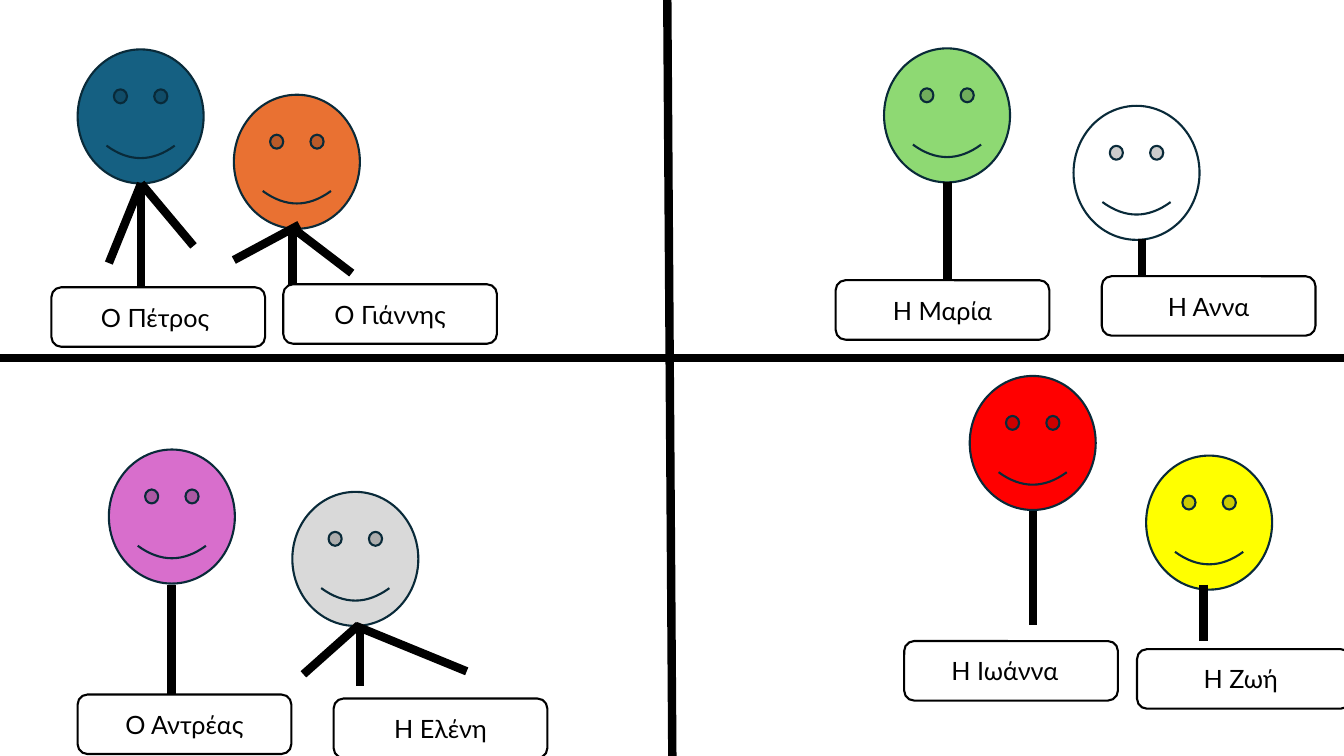
from dataclasses import dataclass

from lxml import etree
from pptx import Presentation
from pptx.dml.color import RGBColor
from pptx.enum.shapes import MSO_CONNECTOR, MSO_SHAPE
from pptx.enum.text import MSO_ANCHOR, PP_ALIGN
from pptx.oxml.ns import qn
from pptx.util import Emu, Inches, Pt

SMILEY = MSO_SHAPE.SMILEY_FACE
ROUNDED = MSO_SHAPE.ROUNDED_RECTANGLE
STRAIGHT = MSO_CONNECTOR.STRAIGHT
MIDDLE = MSO_ANCHOR.MIDDLE
CENTER = PP_ALIGN.CENTER

BLACK = RGBColor(0x00, 0x00, 0x00)
WHITE = RGBColor(0xFF, 0xFF, 0xFF)
NAVY = RGBColor(0x09, 0x2A, 0x39)
BLUE = RGBColor(0x15, 0x60, 0x82)
ORANGE = RGBColor(0xE9, 0x71, 0x32)
GREEN = RGBColor(0x8E, 0xD9, 0x73)
PINK = RGBColor(0xD8, 0x6E, 0xCC)
GRAY = RGBColor(0xD9, 0xD9, 0xD9)
RED = RGBColor(0xFF, 0x00, 0x00)
YELLOW = RGBColor(0xFF, 0xFF, 0x00)

Point = tuple[float, float]  # column, row

# The slide is a grid of square cells, 75 rows high
ROWS = 75
SLIDE_W, SLIDE_H = Inches(13.333), Inches(7.5)
CELL = SLIDE_H / ROWS
COLUMNS = SLIDE_W / CELL
HEAD_SIZE = (12.5, 13.3)
LABEL_SIZE = (21.2, 5.9)
MARGIN = 1.0


@dataclass(frozen=True)
class Person:
    name: str
    color: RGBColor
    head: Point
    neck: Point
    foot_row: float
    label: Point
    arms: tuple[tuple[Point, Point], ...] = ()
    extra_margin: float = 0.0  # on the right of the name


PEOPLE = [
    Person("Ο Πέτρος", BLUE, (7.7, 4.9), (14, 18.2), 29.5, (5.1, 28.5),
           (((14, 18.2), (19.2, 24.4)), ((14, 18.2), (10.8, 26.1))), 0.6),
    Person("Ο Γιάννης", ORANGE, (23.2, 9.4), (29, 22.7), 29.5, (28.1, 28.2),
           (((29.4, 22.9), (34.9, 27.1)), ((23.2, 25.8), (29.7, 22.3)))),
    Person("Η Μαρία", GREEN, (87.7, 4.8), (94, 18.1), 29.4, (82.9, 27.8)),
    Person("Η Άννα", WHITE, (106.5, 10.5), (113.3, 23.7), 29.4, (109.3, 27.4)),
    Person("Ο Αντρέας", PINK, (10.8, 44.6), (17, 58), 69.3, (7.7, 68.9)),
    Person("Η Ελένη", GRAY, (29, 48.8), (35.7, 62.1), 68.1, (33.1, 69.3),
           (((35.6, 62), (30.1, 66.9)), ((35.3, 62.1), (46.3, 66.6)))),
    Person("Η Ιωάννα", RED, (96.2, 37.3), (102.5, 50.7), 62, (89.7, 63.6),
           extra_margin=1.2),
    Person("Η Ζωή", YELLOW, (113.7, 45.2), (119.4, 58), 63.6, (112.8, 64.4),
           extra_margin=0.6),
]

DIVIDERS = [((COLUMNS, 35.5), (0, 35.5)), ((66.2, 0), (66.7, ROWS))]


def cells(count: float) -> Emu:
    return Emu(round(count * CELL))


def add_outlined(s, kind, at: Point, size: Point, fill: RGBColor, line: RGBColor):
    shape = s.shapes.add_shape(kind, *map(cells, at + size))
    shape.shadow.inherit = False
    shape.fill.solid()
    shape.fill.fore_color.rgb = fill
    shape.line.color.rgb = line
    shape.line.width = Pt(1.5)
    return shape


def add_stick(s, start: Point, end: Point) -> None:
    stick = s.shapes.add_connector(STRAIGHT, *map(cells, start + end))
    stick.line.color.rgb = BLACK
    stick.line.width = Pt(6)
    etree.SubElement(stick._element.spPr, qn("a:effectLst"))


def add_label(s, person: Person) -> None:
    label = add_outlined(s, ROUNDED, person.label, LABEL_SIZE, WHITE, BLACK)
    tf = label.text_frame
    tf.text = person.name
    tf.vertical_anchor = MIDDLE
    tf.margin_right = cells(MARGIN + person.extra_margin)
    p = tf.paragraphs[0]
    p.alignment = CENTER
    font = p.runs[0].font
    font.name = "Lato"
    font.size = Pt(18)
    font.color.rgb = BLACK


def main() -> None:
    prs = Presentation()
    prs.slide_width, prs.slide_height = SLIDE_W, SLIDE_H
    s = prs.slides.add_slide(prs.slide_layouts[6])

    for person in PEOPLE:
        add_outlined(s, SMILEY, person.head, HEAD_SIZE, person.color, NAVY)
        add_stick(s, person.neck, (person.neck[0], person.foot_row))
    for start, end in DIVIDERS:
        add_stick(s, start, end)
    for person in PEOPLE:
        add_label(s, person)
        for start, end in person.arms:
            add_stick(s, start, end)

    prs.save("out.pptx")


if __name__ == "__main__":
    main()
